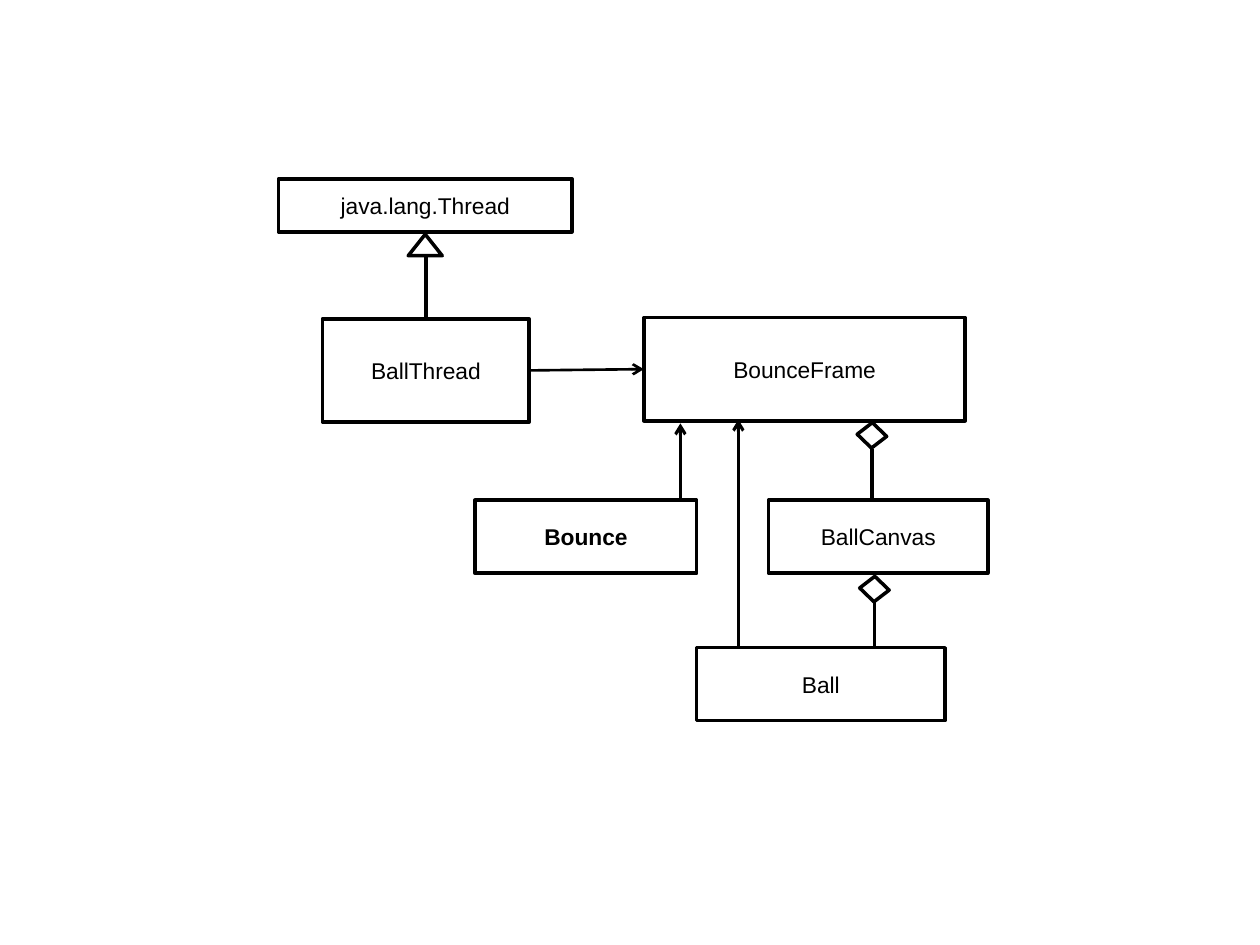
from lxml import etree
from pptx import Presentation
from pptx.dml.color import RGBColor
from pptx.enum.shapes import MSO_CONNECTOR, MSO_SHAPE
from pptx.enum.text import MSO_ANCHOR, PP_ALIGN
from pptx.oxml.ns import qn
from pptx.util import Inches, Pt

RECTANGLE = MSO_SHAPE.RECTANGLE
TRIANGLE = MSO_SHAPE.ISOSCELES_TRIANGLE
PARALLELOGRAM = MSO_SHAPE.PARALLELOGRAM
STRAIGHT = MSO_CONNECTOR.STRAIGHT
MIDDLE = MSO_ANCHOR.MIDDLE
CENTER = PP_ALIGN.CENTER
TOP, LEFT, RIGHT = 0, 1, 3

COLORS = {"ink": "000000", "paper": "FFFFFF"}


def color(name):
    return RGBColor.from_string(COLORS[name])


def write_text(shape, text, size=13, bold=False, font="Arial", ink="ink"):
    frame = shape.text_frame
    frame.word_wrap = True
    frame.vertical_anchor = MIDDLE
    para = frame.paragraphs[0]
    para.alignment = CENTER
    span = para.add_run()
    span.text = text
    span.font.name = font
    span.font.size = Pt(size)
    span.font.bold = bold
    span.font.color.rgb = color(ink)


class ClassDiagram:
    def __init__(self, page, line_width=2):
        self.page = page
        self.line_width = line_width

    def shape(self, kind, left, top, width, height):
        shape = self.page.shapes.add_shape(
            kind, Inches(left), Inches(top), Inches(width), Inches(height))
        shape.shadow.inherit = False
        shape.fill.solid()
        shape.fill.fore_color.rgb = color("paper")
        shape.line.color.rgb = color("ink")
        shape.line.width = Pt(self.line_width)
        return shape

    def class_box(self, name, left, top, width, height, bold=False):
        box = self.shape(RECTANGLE, left, top, width, height)
        write_text(box, name, bold=bold)
        return box

    def inheritance_mark(self, left, top):
        return self.shape(TRIANGLE, left, top, 0.27, 0.17)

    def aggregation_mark(self, left, top):
        mark = self.shape(PARALLELOGRAM, left, top, 0.18, 0.15)
        mark.adjustments[0] = 0.148
        mark.rotation = 44
        return mark

    def line(self, start, end, width=None, arrow=False):
        line = self.page.shapes.add_connector(
            STRAIGHT, *(Inches(value) for value in (*start, *end)))
        line.line.color.rgb = color("ink")
        line.line.width = Pt(width or self.line_width)
        if arrow:
            outline = line.line._get_or_add_ln()
            etree.SubElement(outline, qn("a:tailEnd"), type="arrow")
        etree.SubElement(line._element.spPr, qn("a:effectLst"))
        return line


def main():
    deck = Presentation()
    deck.slide_width = Inches(10)
    deck.slide_height = Inches(7.5)
    page = deck.slides.add_slide(deck.slide_layouts[6])
    diagram = ClassDiagram(page)

    diagram.class_box("java.lang.Thread", 2.21, 1.42, 2.33, 0.42)
    ball_thread = diagram.class_box("BallThread", 2.56, 2.53, 1.64, 0.82)
    bounce_frame = diagram.class_box("BounceFrame", 5.11, 2.52, 2.55, 0.82)
    diagram.class_box("Bounce", 3.77, 3.97, 1.76, 0.58, bold=True)
    diagram.class_box("BallCanvas", 6.1, 3.97, 1.74, 0.58)
    diagram.class_box("Ball", 5.53, 5.14, 1.97, 0.58)

    diagram.inheritance_mark(3.24, 1.86)
    inheritance = diagram.line((3.38, 2.02), (3.38, 2.53))
    inheritance.end_connect(ball_thread, TOP)

    frame_use = diagram.line((4.2, 2.94), (5.11, 2.93), width=1.5, arrow=True)
    frame_use.begin_connect(ball_thread, RIGHT)
    frame_use.end_connect(bounce_frame, LEFT)

    diagram.line((5.4, 3.97), (5.4, 3.36), width=1.75, arrow=True)
    diagram.line((5.86, 5.14), (5.86, 3.33), width=1.75, arrow=True)

    for left, top, bottom in ((6.83, 3.38, 3.97), (6.85, 4.6, 5.14)):
        diagram.aggregation_mark(left, top)
        center = left + 0.09
        diagram.line((center, top + 0.18), (center, bottom))

    deck.save("out.pptx")


if __name__ == "__main__":
    main()
